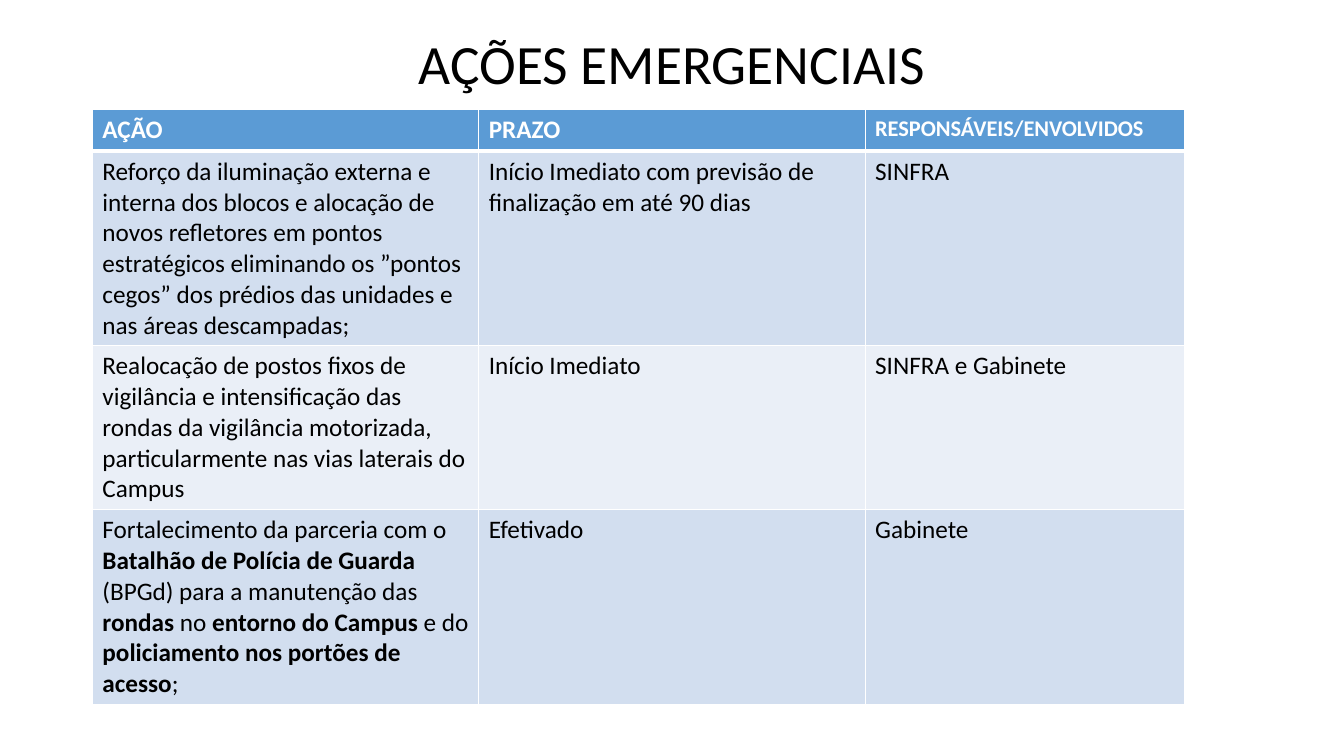
from dataclasses import dataclass

from lxml.etree import SubElement
from pptx import Presentation
from pptx.dml.color import RGBColor
from pptx.enum.text import MSO_ANCHOR, MSO_AUTO_SIZE, PP_ALIGN
from pptx.oxml.ns import qn
from pptx.slide import Slide
from pptx.table import _Cell
from pptx.text.text import TextFrame
from pptx.util import Inches, Pt

COLORS = {
    "text": "000000",
    "white": "FFFFFF",
    "header": "5B9BD5",
    "odd": "D2DEEF",
    "even": "EAEFF7",
}
FONT = "Calibri"

# Grid: 160 columns across the slide, 100 rows down it
SLIDE_WIDTH, SLIDE_HEIGHT = Inches(40 / 3), Inches(7.5)
TABLE_COLUMNS = (46, 46, 38)
LEFT = 11


@dataclass(frozen=True)
class Row:
    height: float
    fill: str
    cells: tuple[str, ...]
    sizes: tuple[float, ...] = (18, 18, 18)
    header: bool = False


# Text between pairs of ** is bold
ROWS = (
    Row(5.47, "header", ("**AÇÃO**", "**PRAZO**", "**RESPONSÁVEIS/ENVOLVIDOS**"),
        sizes=(18, 18, 16), header=True),
    Row(25.33, "odd", (
        "Reforço da iluminação externa e interna dos blocos e alocação de novos "
        "refletores em pontos estratégicos eliminando os ”pontos cegos” dos prédios "
        "das unidades e nas áreas descampadas;",
        "Início Imediato com previsão de finalização em até 90 dias",
        "SINFRA")),
    Row(21.33, "even", (
        "Realocação de postos fixos de vigilância e intensificação das rondas da "
        "vigilância motorizada, particularmente nas vias laterais do Campus",
        "Início Imediato",
        "SINFRA e Gabinete")),
    Row(25.33, "odd", (
        "Fortalecimento da parceria com o **Batalhão de Polícia de Guarda** (BPGd) "
        "para a manutenção das **rondas** no **entorno do Campus** e do "
        "**policiamento nos portões de acesso**;",
        "Efetivado",
        "Gabinete")),
)


def across(columns: float) -> int:
    return round(SLIDE_WIDTH * columns / 160)


def down(rows: float) -> int:
    return round(SLIDE_HEIGHT * rows / 100)


def write_text(frame: TextFrame, text: str, *, size: float, color: str = "text",
               align: PP_ALIGN = PP_ALIGN.LEFT, line_spacing: float = 1.0) -> None:
    frame.word_wrap = True
    paragraph = frame.paragraphs[0]
    paragraph.alignment = align
    paragraph.line_spacing = line_spacing
    for index, part in enumerate(text.split("**")):
        if part:
            run = paragraph.add_run()
            run.text = part
            run.font.name = FONT
            run.font.size = Pt(size)
            run.font.bold = index % 2 == 1
            run.font.color.rgb = RGBColor.from_string(COLORS[color])


def format_cell(cell: _Cell, row: Row) -> None:
    # Borders come before the fill in the cell properties
    properties = cell._tc.get_or_add_tcPr()
    for side in "LRTB":
        width = 3 if row.header and side == "B" else 1
        line = SubElement(properties, qn(f"a:ln{side}"), w=str(Pt(width)))
        solid = SubElement(line, qn("a:solidFill"))
        SubElement(solid, qn("a:srgbClr"), val=COLORS["white"])
    cell.fill.solid()
    cell.fill.fore_color.rgb = RGBColor.from_string(COLORS[row.fill])


def add_title(slide: Slide) -> None:
    title = slide.shapes.title
    title.left, title.top = across(LEFT), down(5.33)
    title.width, title.height = across(138), down(7.07)
    title.text_frame.auto_size = MSO_AUTO_SIZE.NONE
    title.text_frame.vertical_anchor = MSO_ANCHOR.MIDDLE
    write_text(title.text_frame, "AÇÕES EMERGENCIAIS", size=39.6,
               align=PP_ALIGN.CENTER, line_spacing=0.9)


def add_actions_table(slide: Slide) -> None:
    table = slide.shapes.add_table(
        len(ROWS), len(TABLE_COLUMNS), across(LEFT), down(14.53),
        across(sum(TABLE_COLUMNS)), down(sum(row.height for row in ROWS))).table
    for column, width in zip(table.columns, TABLE_COLUMNS):
        column.width = across(width)
    for table_row, row in zip(table.rows, ROWS):
        table_row.height = down(row.height)
        for cell, text, size in zip(table_row.cells, row.cells, row.sizes):
            format_cell(cell, row)
            write_text(cell.text_frame, text, size=size,
                       color="white" if row.header else "text")


def main() -> None:
    presentation = Presentation()
    presentation.slide_width, presentation.slide_height = SLIDE_WIDTH, SLIDE_HEIGHT
    slide = presentation.slides.add_slide(presentation.slide_layouts[5])
    add_title(slide)
    add_actions_table(slide)
    presentation.save("out.pptx")


if __name__ == "__main__":
    main()
